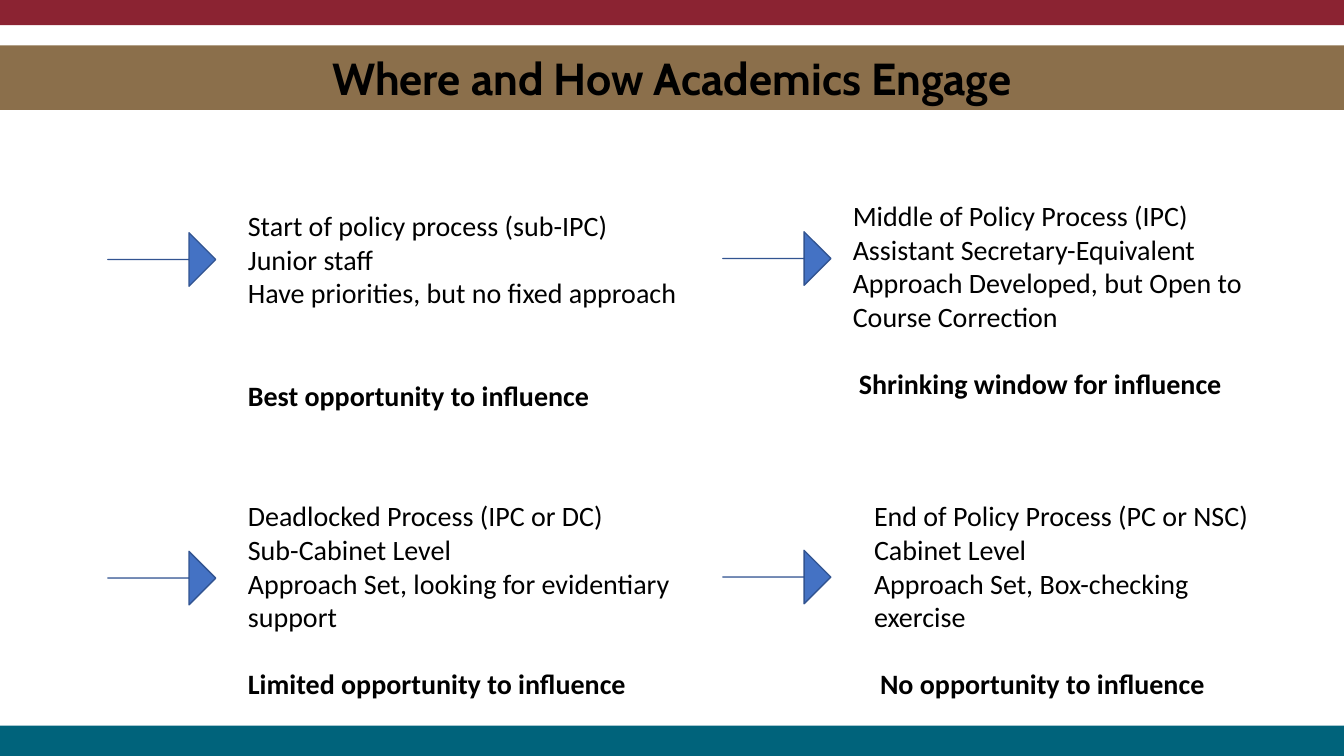
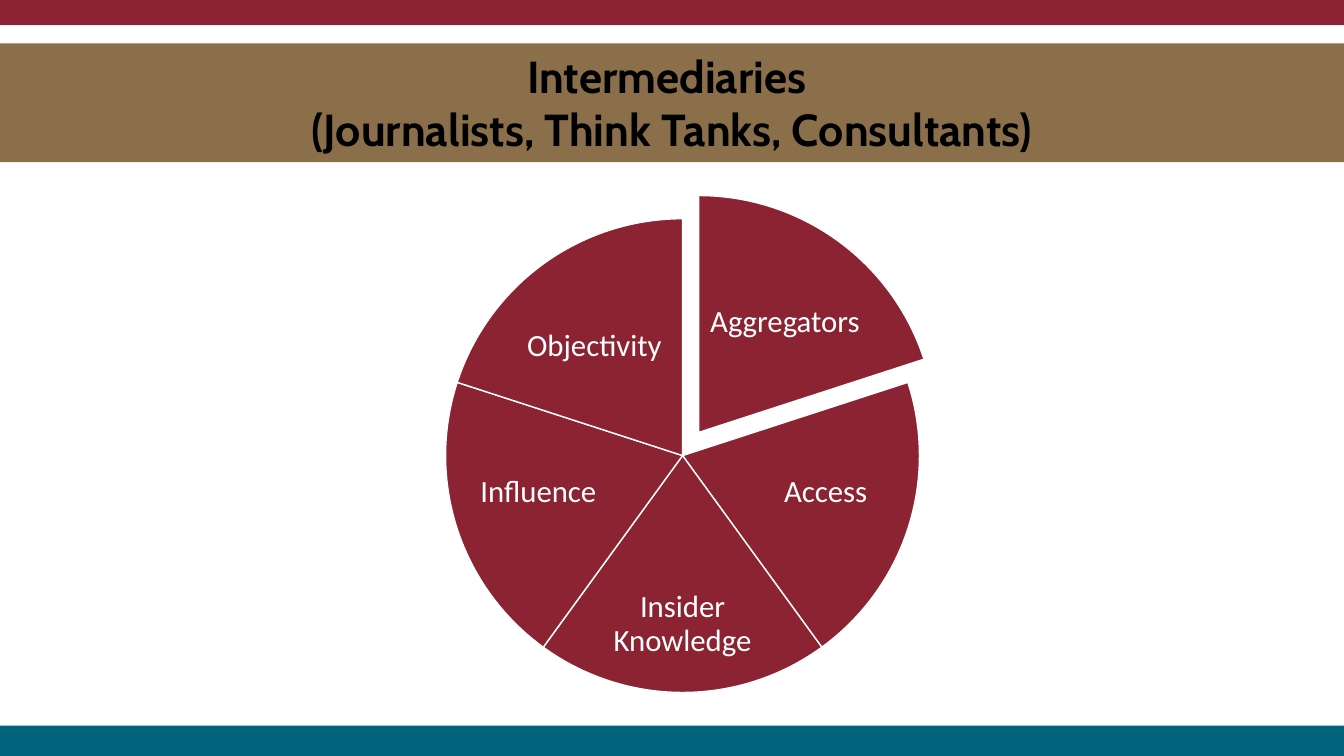
from pptx import Presentation
from pptx.dml.color import RGBColor
from pptx.enum.shapes import MSO_SHAPE
from pptx.enum.text import MSO_ANCHOR, MSO_AUTO_SIZE, PP_ALIGN
from pptx.util import Emu, Pt

# Palette
MAROON = RGBColor(0x8B, 0x23, 0x32)
TEAL = RGBColor(0x00, 0x63, 0x7B)
BRONZE = RGBColor(0x8B, 0x6F, 0x4B)
BLUE = RGBColor(0x44, 0x72, 0xC4)
DARK_BLUE = RGBColor(0x32, 0x54, 0x91)
BLACK = RGBColor(0, 0, 0)
WHITE = RGBColor(255, 255, 255)

# Geometry, in px (100 to the inch)
EMU_PER_PX = 9144
WIDTH, HEIGHT = 1333, 750
PIE_SIZE = 470
FULL_TURN = 216  # 360 degrees in pie adjustment units
PIE_START = 162  # twelve o'clock

TITLE_FONT, BODY_FONT = "Cabin", "Calibri"


def px(length):
    return Emu(length * EMU_PER_PX)


class Deck:
    """Holds the shared style and the slide being built."""

    def __init__(self):
        self.deck = Presentation()
        self.deck.slide_width, self.deck.slide_height = px(WIDTH), px(HEIGHT)
        self.page = None

    def new_page(self, title_lines, title_top, title_height):
        self.page = self.deck.slides.add_slide(self.deck.slide_layouts[5])
        self.shape(MSO_SHAPE.RECTANGLE, 0, 0, WIDTH, 25, MAROON)
        self.shape(MSO_SHAPE.RECTANGLE, 0, 720, WIDTH, 30, TEAL)
        self.title(title_lines, title_top, title_height)

    def title(self, lines, top, height):
        title = self.page.shapes.title
        title.left, title.top = px(0), px(top)
        title.width, title.height = px(WIDTH), px(height)
        title.fill.solid()
        title.fill.fore_color.rgb = BRONZE
        frame = title.text_frame
        frame.auto_size = MSO_AUTO_SIZE.NONE
        frame.vertical_anchor = MSO_ANCHOR.TOP
        for index, line in enumerate(lines):
            para = self.paragraph(frame, index)
            para.alignment = PP_ALIGN.CENTER
            self.run(para, line, 32, BLACK, TITLE_FONT, bold=True)

    def shape(self, kind, left, top, width, height, fill, line=None):
        shape = self.page.shapes.add_shape(
            kind, px(left), px(top), px(width), px(height))
        shape.shadow.inherit = False
        shape.fill.solid()
        shape.fill.fore_color.rgb = fill
        if line is None:
            shape.line.fill.background()
        else:
            shape.line.color.rgb = line
            shape.line.width = Pt(1)
        return shape

    def arrow(self, left, top):
        arrow = self.shape(MSO_SHAPE.RIGHT_ARROW, left, top, 107, 53,
                           BLUE, DARK_BLUE)
        arrow.adjustments[0], arrow.adjustments[1] = 0, 0.5

    def slice(self, left, top, start, sweep):
        piece = self.shape(MSO_SHAPE.PIE, left, top, PIE_SIZE, PIE_SIZE,
                           MAROON, WHITE)
        piece.adjustments[0] = round(start % FULL_TURN, 2)
        piece.adjustments[1] = round((start + sweep) % FULL_TURN, 2)

    def text_frame(self, left, top, width, height):
        box = self.page.shapes.add_textbox(
            px(left), px(top), px(width), px(height))
        box.text_frame.word_wrap = True
        return box.text_frame

    def stage(self, left, top, width, facts, verdict, gap, indent):
        """Plain lines followed by a bold verdict."""
        frame = self.text_frame(left, top, width, 212)
        for index, fact in enumerate(facts):
            self.run(self.paragraph(frame, index), fact, 20, BLACK)
        para = frame.add_paragraph()
        para.space_before = Pt(gap)
        para._p.get_or_add_pPr().set("marL", str(px(indent)))
        self.run(para, verdict, 20, BLACK, bold=True)

    def label(self, left, top, width, height, text):
        frame = self.text_frame(left, top, width, height)
        frame.vertical_anchor = MSO_ANCHOR.MIDDLE
        frame.margin_left = frame.margin_right = px(3)
        frame.margin_top = frame.margin_bottom = px(3)
        para = frame.paragraphs[0]
        para.alignment = PP_ALIGN.CENTER
        para.line_spacing = 0.9
        self.run(para, text, 22, WHITE)

    @staticmethod
    def paragraph(frame, index):
        return frame.add_paragraph() if index else frame.paragraphs[0]

    @staticmethod
    def run(para, text, size, color, font=BODY_FONT, bold=False):
        span = para.add_run()
        span.text = text
        span.font.name, span.font.size = font, Pt(size)
        span.font.bold = bold
        span.font.color.rgb = color

    def save(self):
        self.deck.save("out.pptx")


# Arrow place; text left, top, width; facts; verdict, gap above it, indent
STAGES = [
    ((107, 231), (236, 202, 455),
     ["Start of policy process (sub-IPC)", "Junior staff",
      "Have priorities, but no fixed approach"],
     "Best opportunity to influence", 49, 0),
    ((717, 230), (836, 192, 414),
     ["Middle of Policy Process (IPC)", "Assistant Secretary-Equivalent",
      "Approach Developed, but Open to Course Correction"],
     "Shrinking window for influence", 24, 6),
    ((107, 547), (236, 490, 455),
     ["Deadlocked Process (IPC or DC)", "Sub-Cabinet Level",
      "Approach Set, looking for evidentiary support"],
     "Limited opportunity to influence", 24, 0),
    ((717, 546), (857, 490, 402),
     ["End of Policy Process (PC or NSC)", "Cabinet Level",
      "Approach Set, Box-checking exercise"],
     "No opportunity to influence", 24, 6),
]

# Slices clockwise from the top: label, label box, offset from the pie
SLICES = [
    ("Aggregators", (699, 265, 159, 109), (16, -23)),
    ("Access", (749, 430, 140, 118), (0, 0)),
    ("Insider Knowledge", (593, 569, 168, 101), (0, 0)),
    ("Influence", (464, 430, 140, 118), (0, 0)),
    ("Objectivity", (510, 289, 159, 109), (0, 0)),
]


def main():
    deck = Deck()

    # Stages of the policy process
    deck.new_page(["Where and How Academics Engage"], 45, 64)
    for arrow_place, text_place, facts, verdict, gap, indent in STAGES:
        deck.arrow(*arrow_place)
        deck.stage(*text_place, facts, verdict, gap, indent)

    # Roles of intermediaries
    deck.new_page(["Intermediaries ",
                   "(Journalists, Think Tanks, Consultants)"], 43, 118)
    sweep = FULL_TURN / len(SLICES)
    for index, (text, label_box, (shift_x, shift_y)) in enumerate(SLICES):
        deck.slice(442 + shift_x, 217 + shift_y,
                   PIE_START + index * sweep, sweep)
        deck.label(*label_box, text)

    deck.save()


if __name__ == "__main__":
    main()
